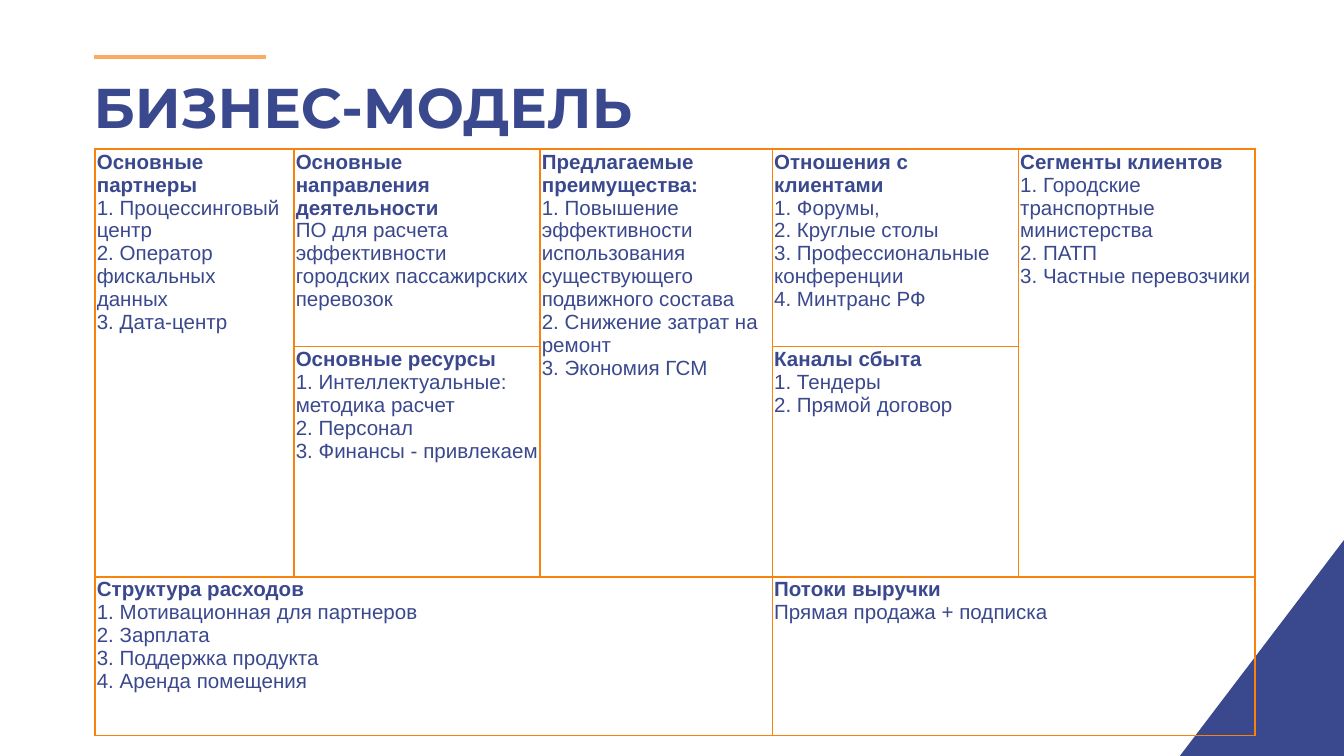
"""Build the business model canvas slide."""
import pptx
import pptx.dml.color
import pptx.enum.shapes
import pptx.enum.text
import pptx.oxml
import pptx.oxml.ns
import pptx.util
from pptx.util import Cm

NAVY, ORANGE, ACCENT = "3A488D", "F7820C", "FAAD60"
COLUMN_WIDTHS = (3.76, 4.65, 4.39, 4.65, 4.47)
ROW_HEIGHTS = (3.73, 3.73, 3.0)

# (row, column, rows spanned, columns spanned, heading, entries)
BLOCKS = (
    (0, 0, 2, 1, "Основные партнеры",
     ("1. Процессинговый центр", "2. Оператор фискальных данных", "3. Дата-центр")),
    (0, 1, 1, 1, "Основные направления деятельности",
     ("ПО для расчета эффективности городских пассажирских перевозок",)),
    (0, 2, 2, 1, "Предлагаемые преимущества:",
     ("1. Повышение эффективности использования существующего подвижного состава",
      "2. Снижение затрат на ремонт", "3. Экономия ГСМ")),
    (0, 3, 1, 1, "Отношения с клиентами",
     ("1. Форумы,", "2. Круглые столы", "3. Профессиональные конференции",
      "4. Минтранс РФ")),
    (0, 4, 2, 1, "Сегменты клиентов",
     ("1. Городские транспортные министерства", "2. ПАТП", "3. Частные перевозчики")),
    (1, 1, 1, 1, "Основные ресурсы",
     ("1. Интеллектуальные: методика расчет", "2. Персонал",
      "3. Финансы - привлекаем")),
    (1, 3, 1, 1, "Каналы сбыта", ("1. Тендеры", "2. Прямой договор")),
    (2, 0, 1, 3, "Структура расходов",
     ("1. Мотивационная для партнеров", "2. Зарплата", "3. Поддержка продукта",
      "4. Аренда помещения")),
    (2, 3, 1, 2, "Потоки выручки", ("Прямая продажа + подписка",)),
)


def color(value):
    """Turn a hex string into a colour."""
    return pptx.dml.color.RGBColor.from_string(value)


def write(paragraph, text, size=11, font="Arial", fill=NAVY, bold=False):
    """Add formatted text to a left-aligned paragraph."""
    paragraph.alignment = pptx.enum.text.PP_ALIGN.LEFT
    run = paragraph.add_run()
    run.text = text
    run.font.size = pptx.util.Pt(size)
    run.font.name = font
    run.font.bold = bold
    run.font.color.rgb = color(fill)


def add_accent_line(slide):
    """Draw the short rule above the title."""
    accent = slide.shapes.add_connector(
        pptx.enum.shapes.MSO_CONNECTOR.STRAIGHT, Cm(5.03), Cm(1.07), Cm(1.78), Cm(1.07))
    accent.line.color.rgb = color(ACCENT)
    accent.line.width = pptx.util.Pt(2.25)
    pptx.oxml.ns.qn("a:effectLst")
    accent._element.spPr.append(pptx.oxml.parse_xml(
        f'<a:effectLst {pptx.oxml.ns.nsdecls("a")}/>'))


def add_corner(slide):
    """Draw the triangle in the bottom right corner."""
    corner = slide.shapes.add_shape(
        pptx.enum.shapes.MSO_SHAPE.RIGHT_TRIANGLE, Cm(22.3), Cm(10.21), Cm(3.1), Cm(4.08))
    corner.shadow.inherit = False
    corner.fill.solid()
    corner.fill.fore_color.rgb = color(NAVY)
    corner.line.fill.background()
    corner._element.spPr.xfrm.set("flipH", "1")


def fill_title(slide):
    """Place and write the title."""
    title = slide.shapes.title
    title.left, title.top, title.width, title.height = Cm(1.52), Cm(1.12), Cm(21.41), Cm(1.6)
    frame = title.text_frame
    frame.margin_left = frame.margin_right = Cm(0.25)
    frame.margin_top = frame.margin_bottom = Cm(0.25)
    frame.auto_size = pptx.enum.text.MSO_AUTO_SIZE.NONE
    frame.vertical_anchor = pptx.enum.text.MSO_ANCHOR.TOP
    write(frame.paragraphs[0], "БИЗНЕС-МОДЕЛЬ", size=30, font="Montserrat", bold=True)


def style_cell(cell):
    """Give a cell thin margins, an orange frame and no fill."""
    cell.margin_left = cell.margin_right = cell.margin_top = Cm(0.03)
    cell.margin_bottom = 0
    properties = cell._tc.get_or_add_tcPr()
    for side in ("lnL", "lnR", "lnT", "lnB"):
        properties.append(pptx.oxml.parse_xml(
            f'<a:{side} {pptx.oxml.ns.nsdecls("a")} w="12700"><a:solidFill>'
            f'<a:srgbClr val="{ORANGE}"/></a:solidFill></a:{side}>'))
    cell.fill.background()


def add_canvas(slide):
    """Add the table of business model blocks."""
    canvas = slide.shapes.add_table(
        len(ROW_HEIGHTS), len(COLUMN_WIDTHS), Cm(1.8), Cm(2.82),
        Cm(sum(COLUMN_WIDTHS)), Cm(sum(ROW_HEIGHTS))).table
    canvas.first_row = canvas.horz_banding = False
    for column, width in zip(canvas.columns, COLUMN_WIDTHS):
        column.width = Cm(width)
    for row, height in zip(canvas.rows, ROW_HEIGHTS):
        row.height = Cm(height)
    for cell in canvas.iter_cells():
        style_cell(cell)
    for row, column, row_span, column_span, heading, entries in BLOCKS:
        block = canvas.cell(row, column)
        if row_span * column_span > 1:
            block.merge(canvas.cell(row + row_span - 1, column + column_span - 1))
        write(block.text_frame.paragraphs[0], heading, bold=True)
        for entry in entries:
            write(block.text_frame.add_paragraph(), entry)


def main():
    """Build and save the slide."""
    deck = pptx.Presentation()
    deck.slide_width, deck.slide_height = Cm(25.4), Cm(14.29)
    slide = deck.slides.add_slide(deck.slide_layouts[5])
    add_accent_line(slide)
    add_corner(slide)
    fill_title(slide)
    add_canvas(slide)
    deck.save("out.pptx")


if __name__ == "__main__":
    main()
